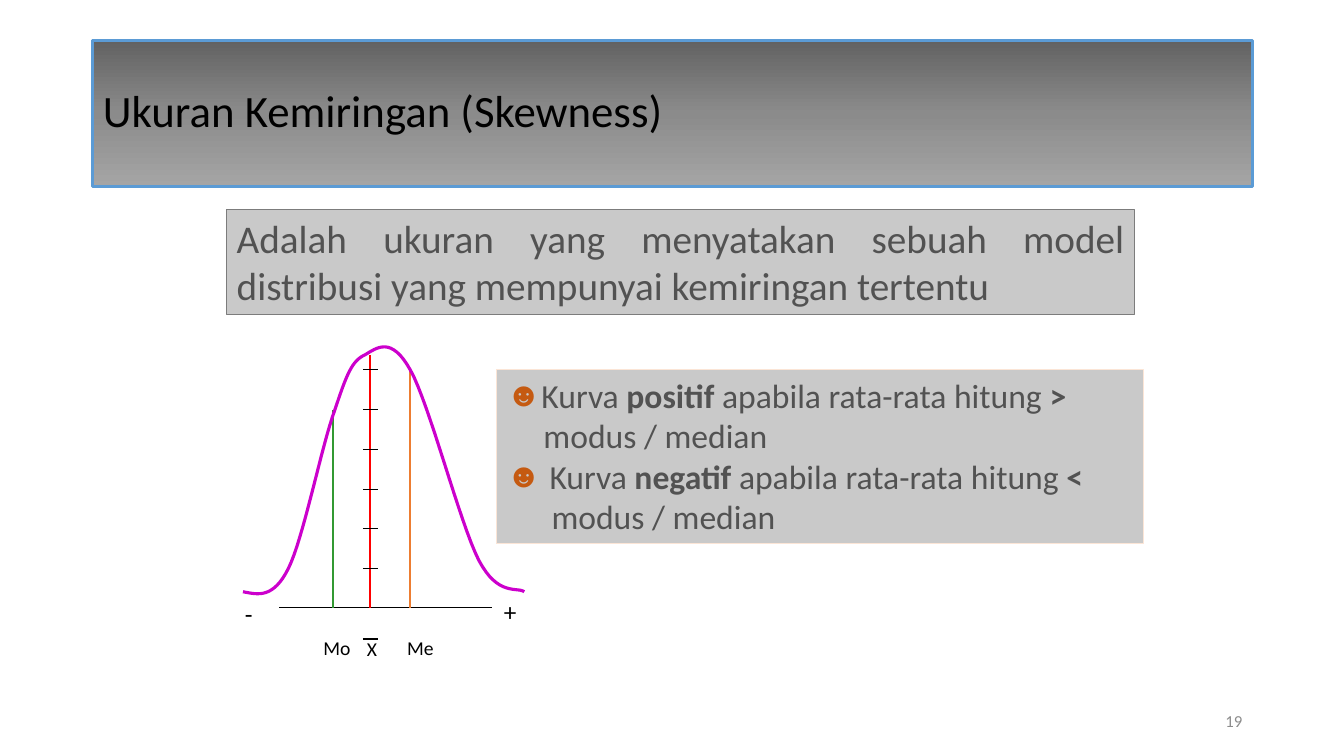
"""Build the slide on skewness with its distribution curve."""
from dataclasses import dataclass
from copy import deepcopy

import lxml.etree
import pptx
import pptx.dml.color
import pptx.enum.shapes
import pptx.enum.text
import pptx.oxml.ns
import pptx.util

Inches = pptx.util.Inches
Align = pptx.enum.text.PP_ALIGN
Anchor = pptx.enum.text.MSO_ANCHOR

COLORS = {
    "black": "000000", "grey_text": "525252", "number": "8C8C8C",
    "panel": "C9C9C9", "panel_edge": "7C7C7C", "list_edge": "FBE5D6",
    "title_edge": "5B9BD5", "title_top": "626262", "title_middle": "8B8B8B",
    "title_bottom": "A5A5A5", "bullet": "C55A11", "mean": "FF0000",
    "mode": "339933", "median": "ED7D31", "curve": "CC00CC",
}


@dataclass
class Rule:
    start: tuple[float, float]
    end: tuple[float, float]
    color: str = "black"
    width: float = 0.75


@dataclass
class Label:
    text: str
    left: float
    top: float
    width: float
    height: float
    size: float


@dataclass
class ListLine:
    runs: list[tuple[str, bool]]
    margin: float
    bullet: bool = False


BASE, TICK_LEFT, TICK_RIGHT = 6.03, 3.6, 3.75
RULES = [
    Rule((2.77, BASE), (4.88, BASE)),
    Rule((3.67, BASE), (3.67, 3.52), "mean", 1.5),
    Rule((3.3, BASE), (3.3, 4.07), "mode", 1.5),
    Rule((4.07, BASE), (4.07, 3.67), "median", 1.5),
    Rule((TICK_LEFT, 6.34), (TICK_RIGHT, 6.34), width=1),
] + [
    Rule((TICK_LEFT, 3.67 + 0.394 * step), (TICK_RIGHT, 3.67 + 0.394 * step))
    for step in range(6)
]
LABELS = [
    Label("Mo", 3.11, 6.26, 0.47, 0.34, 14),
    Label("X", 3.54, 6.27, 0.3, 0.34, 14),
    Label("Me", 3.94, 6.26, 0.47, 0.34, 14),
    Label("+", 4.9, 5.87, 0.33, 0.4, 18),
    Label("-", 2.33, 5.89, 0.28, 0.4, 18),
]
CURVE_START = (2.41, 5.87)
CURVE_SEGMENTS = [
    ((2.56, 5.9), (2.71, 5.94), (2.86, 5.64)),
    ((3.01, 5.34), (3.19, 4.42), (3.32, 4.07)),
    ((3.44, 3.71), (3.49, 3.58), (3.62, 3.52)),
    ((3.74, 3.45), (3.88, 3.33), (4.07, 3.67)),
    ((4.26, 4.01), (4.56, 5.19), (4.75, 5.56)),
    ((4.94, 5.92), (5.13, 5.82), (5.2, 5.87)),
]
LIST_LINES = [
    ListLine([("Kurva ", False), ("positif ", True),
              ("apabila rata-rata hitung ", False), (">", True)], 0.35, True),
    ListLine([("modus / median", False)], 0.37),
    ListLine([("Kurva ", False), ("negatif ", True),
              ("apabila rata-rata hitung ", False), ("<", True)], 0.43, True),
    ListLine([("modus / median", False)], 0.45),
]


def rgb(name: str) -> pptx.dml.color.RGBColor:
    """Return a named colour."""
    return pptx.dml.color.RGBColor.from_string(COLORS[name])


def place(shape, left: float, top: float, width: float, height: float) -> None:
    """Move and size a shape in inches."""
    shape.left, shape.top = Inches(left), Inches(top)
    shape.width, shape.height = Inches(width), Inches(height)


def set_line(shape, color: str, width: float) -> None:
    """Give a shape a solid line."""
    shape.line.color.rgb = rgb(color)
    shape.line.width = pptx.util.Pt(width)


def add_run(paragraph, text: str, size: float, color: str, bold: bool = False) -> None:
    """Append one formatted run."""
    run = paragraph.add_run()
    run.text = text
    run.font.name = "Calibri"
    run.font.size = pptx.util.Pt(size)
    run.font.bold = bold
    run.font.color.rgb = rgb(color)


def style_panel(shape, edge: str) -> None:
    """Give a shape the grey panel look."""
    shape.fill.solid()
    shape.fill.fore_color.rgb = rgb("panel")
    set_line(shape, edge, 0.75)
    shape.text_frame.word_wrap = True
    shape.text_frame.vertical_anchor = Anchor.TOP


def set_bullet(paragraph, line: ListLine) -> None:
    """Set the indent and bullet of a list paragraph."""
    qn = pptx.oxml.ns.qn
    properties = paragraph._p.get_or_add_pPr()
    properties.set("marL", str(Inches(line.margin)))
    properties.set("indent", str(-Inches(line.margin) if line.bullet else 0))
    if line.bullet:
        color = lxml.etree.SubElement(properties, qn("a:buClr"))
        lxml.etree.SubElement(color, qn("a:srgbClr"), val=COLORS["bullet"])
        lxml.etree.SubElement(properties, qn("a:buChar"), char="☻")
    else:
        lxml.etree.SubElement(properties, qn("a:buNone"))


def fill_title(title) -> None:
    """Format the title with its gradient bar."""
    place(title, 0.92, 0.4, 11.5, 1.45)
    title.fill.gradient()
    title.fill.gradient_angle = 270
    first = title._element.spPr.find(".//" + pptx.oxml.ns.qn("a:gs"))
    first.addnext(deepcopy(first))
    names = ("title_top", "title_middle", "title_bottom")
    for index, (stop, name) in enumerate(zip(title.fill.gradient_stops, names)):
        stop.color.rgb = rgb(name)
        stop.position = index / 2
    set_line(title, "title_edge", 2)
    title.text_frame.vertical_anchor = Anchor.MIDDLE
    paragraph = title.text_frame.paragraphs[0]
    paragraph.alignment = Align.LEFT
    paragraph.line_spacing = 0.9
    add_run(paragraph, "Ukuran Kemiringan (Skewness)", 32, "black")


def fill_list(body) -> None:
    """Write the list of curve types."""
    place(body, 4.92, 3.67, 6.42, 1.72)
    style_panel(body, "list_edge")
    frame = body.text_frame
    frame.auto_size = pptx.enum.text.MSO_AUTO_SIZE.NONE
    for index, line in enumerate(LIST_LINES):
        paragraph = frame.add_paragraph() if index else frame.paragraphs[0]
        paragraph.space_before = pptx.util.Pt(0)
        set_bullet(paragraph, line)
        for text, bold in line.runs:
            add_run(paragraph, text, 24, "grey_text", bold)


def add_definition(slide) -> None:
    """Add the definition panel."""
    shape = slide.shapes.add_shape(
        pptx.enum.shapes.MSO_SHAPE.RECTANGLE,
        Inches(2.25), Inches(2.08), Inches(9), Inches(1.04))
    shape.shadow.inherit = False
    style_panel(shape, "panel_edge")
    paragraph = shape.text_frame.paragraphs[0]
    paragraph.alignment = Align.JUSTIFY
    add_run(paragraph, "Adalah ukuran yang menyatakan sebuah model distribusi "
            "yang mempunyai kemiringan tertentu", 28, "grey_text")


def add_label(shapes, label: Label, color: str = "black"):
    """Add a one-line text box and return it."""
    box = shapes.add_textbox(Inches(label.left), Inches(label.top),
                             Inches(label.width), Inches(label.height))
    box.text_frame.word_wrap = False
    add_run(box.text_frame.paragraphs[0], label.text, label.size, color)
    return box


def add_rule(shapes, rule: Rule) -> None:
    """Add a straight line."""
    line = shapes.add_connector(
        pptx.enum.shapes.MSO_CONNECTOR.STRAIGHT,
        *(Inches(value) for value in rule.start + rule.end))
    set_line(line, rule.color, rule.width)
    lxml.etree.SubElement(line._element.spPr, pptx.oxml.ns.qn("a:effectLst"))


def add_curve(shapes, steps: int = 16) -> None:
    """Trace the distribution curve through its Bezier segments."""
    points, start = [], CURVE_START
    for first, second, end in CURVE_SEGMENTS:
        for step in range(1, steps + 1):
            t = step / steps
            weights = ((1 - t) ** 3, 3 * t * (1 - t) ** 2, 3 * t * t * (1 - t), t ** 3)
            points.append(tuple(
                Inches(sum(weight * value for weight, value in zip(weights, axis)))
                for axis in zip(start, first, second, end)))
        start = end
    builder = shapes.build_freeform(*(Inches(value) for value in CURVE_START))
    builder.add_line_segments(points, close=False)
    curve = builder.convert_to_shape()
    curve.shadow.inherit = False
    curve.fill.background()
    set_line(curve, "curve", 2.25)


def main() -> None:
    """Build and save the presentation."""
    presentation = pptx.Presentation()
    presentation.slide_width, presentation.slide_height = Inches(13.33), Inches(7.5)
    slide = presentation.slides.add_slide(presentation.slide_layouts[1])
    fill_title(slide.shapes.title)
    fill_list(slide.placeholders[1])
    add_definition(slide)
    diagram = slide.shapes.add_group_shape().shapes
    for rule in RULES:
        add_rule(diagram, rule)
    for label in LABELS:
        add_label(diagram, label)
    add_curve(diagram)
    number = add_label(slide.shapes, Label("19", 9.42, 6.95, 3, 0.4, 12), "number")
    number.text_frame.word_wrap = True
    number.text_frame.vertical_anchor = Anchor.MIDDLE
    number.text_frame.paragraphs[0].alignment = Align.RIGHT
    presentation.save("out.pptx")


if __name__ == "__main__":
    main()
